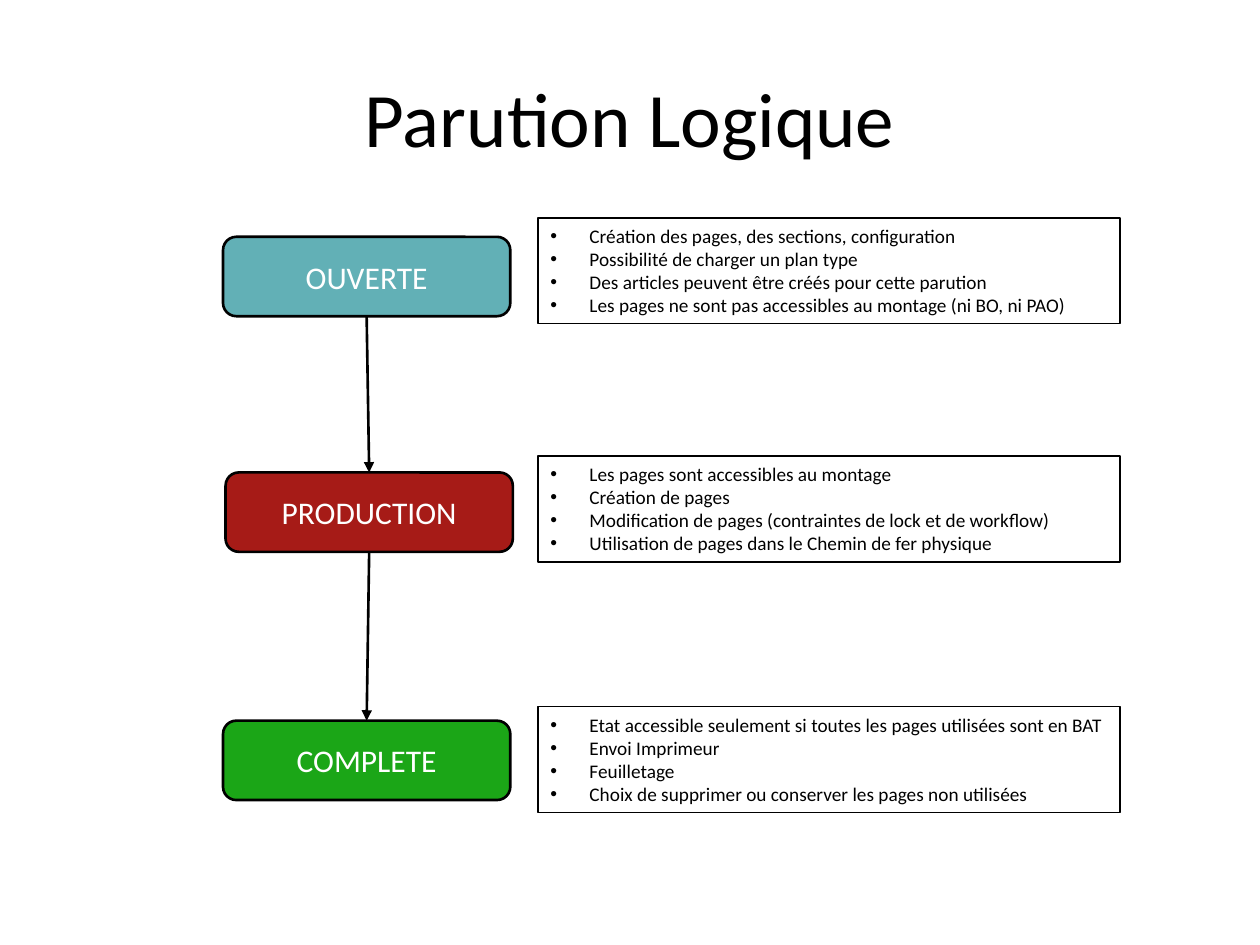
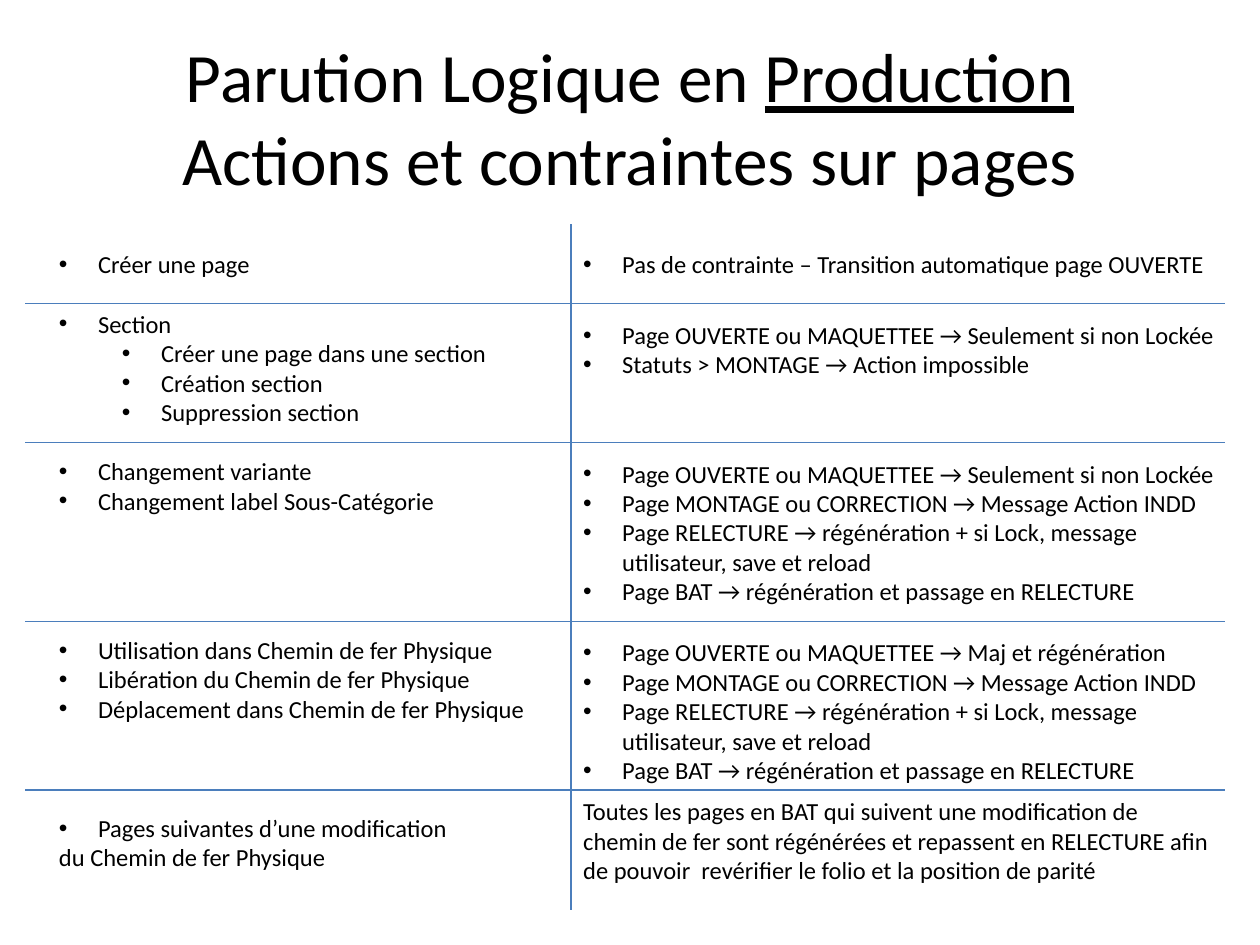
from dataclasses import dataclass

from lxml.etree import SubElement
from pptx import Presentation
from pptx.dml.color import RGBColor
from pptx.enum.shapes import MSO_CONNECTOR as Connector, MSO_SHAPE as Shape
from pptx.enum.text import MSO_ANCHOR as Anchor, MSO_AUTO_SIZE as AutoSize, PP_ALIGN as Align
from pptx.oxml.ns import qn
from pptx.util import Pt

PX = 9144  # EMU in one px, 100 px to the inch
TITLE_ONLY = 5


@dataclass(frozen=True)
class Theme:
    font: str = "Calibri"
    ink: str = "000000"
    paper: str = "FFFFFF"
    rule: str = "4B7EBC"
    open_state: str = "62B0B6"
    production_state: str = "A61B17"
    complete_state: str = "1BA617"
    title: float = 44
    long_title: float = 39.6
    state: float = 18
    body: float = 14
    note: float = 11
    line_pitch: float = 17.1  # height of one body line


THEME = Theme()


@dataclass(frozen=True)
class Item:
    text: str
    level: int = 0
    bullet: bool = True
    lines_before: int = 0


STATES = [
    ("OUVERTE", THEME.open_state, (177, 188), 173, [
        "Création des pages, des sections, configuration",
        "Possibilité de charger un plan type",
        "Des articles peuvent être créés pour cette parution",
        "Les pages ne sont pas accessibles au montage (ni BO, ni PAO)"]),
    ("PRODUCTION", THEME.production_state, (179, 375), 362, [
        "Les pages sont accessibles au montage",
        "Création de pages",
        "Modification de pages (contraintes de lock et de workflow)",
        "Utilisation de pages dans le Chemin de fer physique"]),
    ("COMPLETE", THEME.complete_state, (177, 572), 561, [
        "Etat accessible seulement si toutes les pages utilisées sont en BAT",
        "Envoi Imprimeur",
        "Feuilletage",
        "Choix de supprimer ou conserver les pages non utilisées"]),
]

ACTIONS = [
    Item("Créer une page"),
    Item("Section", lines_before=1),
    Item("Créer une page dans une section", level=1),
    Item("Création section", level=1),
    Item("Suppression section", level=1),
    Item("Changement variante", lines_before=1),
    Item("Changement label Sous-Catégorie"),
    Item("Utilisation dans Chemin de fer Physique", lines_before=4),
    Item("Libération du Chemin de fer Physique"),
    Item("Déplacement dans Chemin de fer Physique"),
    Item("Pages suivantes d’une modification", lines_before=3),
    Item("du Chemin de fer Physique", bullet=False),
]

NOT_LOCKED = "Page OUVERTE ou MAQUETTEE → Seulement si non Lockée"
LATER_STATUSES = [
    "Page MONTAGE ou CORRECTION → Message Action INDD",
    "Page RELECTURE → régénération + si Lock, message utilisateur, save et reload",
    "Page BAT → régénération et passage en RELECTURE",
]

# top, height and items of each row of constraints
CONSTRAINTS = [
    (193, 34, [Item("Pas de contrainte – Transition automatique page OUVERTE")]),
    (249, 57, [Item(NOT_LOCKED), Item("Statuts > MONTAGE → Action impossible")]),
    (359, 128, [Item(text) for text in [NOT_LOCKED, *LATER_STATUSES]]),
    (501, 128, [Item(text) for text in
                ["Page OUVERTE ou MAQUETTEE → Maj et régénération", *LATER_STATUSES]]),
    (627, 81, [
        Item("Toutes les pages en BAT qui suivent une modification de", bullet=False),
        Item("chemin de fer sont régénérées et repassent en RELECTURE afin "
             "de pouvoir  revérifier le folio et la position de parité", bullet=False)]),
]


def emu(*lengths):
    return [length * PX for length in lengths]


def colour(value):
    return RGBColor.from_string(value)


def set_font(para, size, ink=THEME.ink):
    para.font.name = THEME.font
    para.font.size = Pt(size)
    para.font.color.rgb = colour(ink)


def add_bullet(para, level):
    """Hang a round bullet 31 px left of the text."""
    properties = para._p.get_or_add_pPr()
    properties.set("marL", str((31 + 50 * level) * PX))
    properties.set("indent", str(-31 * PX))
    SubElement(properties, qn("a:buFont")).set("typeface", "Arial")
    SubElement(properties, qn("a:buChar")).set("char", "•")


def fill_list(frame, items, size):
    frame.word_wrap = True
    frame.vertical_anchor = Anchor.TOP
    for index, item in enumerate(items):
        para = frame.paragraphs[0] if index == 0 else frame.add_paragraph()
        para.text = item.text
        para.level = item.level
        para.alignment = Align.LEFT
        if item.lines_before:
            para.space_before = Pt(item.lines_before * THEME.line_pitch)
        if item.bullet:
            add_bullet(para, item.level)
        set_font(para, size)


def add_list(page, box, items):
    fill_list(page.shapes.add_textbox(*emu(*box)).text_frame, items, THEME.body)


def add_block(page, kind, box, line_width, fill=None):
    block = page.shapes.add_shape(kind, *emu(*box))
    block.shadow.inherit = False
    if fill:
        block.fill.solid()
        block.fill.fore_color.rgb = colour(fill)
    else:
        block.fill.background()
    block.line.color.rgb = colour(THEME.ink)
    block.line.width = Pt(line_width)
    return block


def add_line(page, start, end, ink, width):
    line = page.shapes.add_connector(Connector.STRAIGHT, *emu(*start, *end))
    line.line.color.rgb = colour(ink)
    line.line.width = Pt(width)
    SubElement(line._element.spPr, qn("a:effectLst"))
    return line


def add_page(deck, size, title_lines):
    """Add a page whose title lines are lists of (text, underlined) spans."""
    page = deck.slides.add_slide(deck.slide_layouts[TITLE_ONLY])
    title = page.shapes.title
    title.left, title.top, title.width, title.height = emu(50, 30, 900, 125)
    frame = title.text_frame
    frame.auto_size = AutoSize.NONE
    frame.vertical_anchor = Anchor.MIDDLE
    para = frame.paragraphs[0]
    para.alignment = Align.CENTER
    set_font(para, size)
    for index, spans in enumerate(title_lines):
        if index:
            para.add_line_break()
        for text, underlined in spans:
            span = para.add_run()
            span.text = text
            span.font.size = Pt(size)
            if underlined:
                span.font.underline = True
    return page


def add_state(page, box, name, fill):
    state = add_block(page, Shape.ROUNDED_RECTANGLE, box, 1.5, fill)
    state.text_frame.vertical_anchor = Anchor.MIDDLE
    para = state.text_frame.paragraphs[0]
    para.text = name
    para.alignment = Align.CENTER
    set_font(para, THEME.state, THEME.paper)
    return state


def add_note(page, box, texts):
    note = add_block(page, Shape.RECTANGLE, box, 0.75)
    fill_list(note.text_frame, [Item(text) for text in texts], THEME.note)


def add_arrow(page, upper, lower):
    """Join the bottom of one state to the top of the next."""
    arrow = add_line(page, (0, 0), (0, 0), THEME.ink, 1.5)
    arrow.begin_connect(upper, 2)
    arrow.end_connect(lower, 0)
    SubElement(arrow.line._get_or_add_ln(), qn("a:tailEnd")).set("type", "triangle")


def build_states_page(deck):
    page = add_page(deck, THEME.title, [[("Parution Logique", False)]])
    states = []
    for name, fill, corner, note_top, texts in STATES:
        states.append(add_state(page, (*corner, 228, 63), name, fill))
        add_note(page, (427, note_top, 462, 84), texts)
    for upper, lower in zip(states, states[1:]):
        add_arrow(page, upper, lower)


def add_grid(page, box, divider, rules):
    """Draw the column divider and the row rules across the box."""
    left, top, width, height = box
    add_line(page, (left + divider, top), (left + divider, top + height), THEME.rule, 1)
    for offset in rules:
        add_line(page, (left, top + offset), (left + width, top + offset), THEME.rule, 0.75)


def build_actions_page(deck):
    page = add_page(deck, THEME.long_title, [
        [("Parution Logique en ", False), ("Production", True)],
        [("Actions et contraintes sur pages", False)]])
    add_grid(page, (20, 178, 952, 544), 433, (63, 173, 315, 449))
    add_list(page, (37, 193, 393, 528), ACTIONS)
    for top, height, items in CONSTRAINTS:
        add_list(page, (453, top, 528, height), items)


def main():
    deck = Presentation()
    deck.slide_width, deck.slide_height = emu(1000, 750)
    build_states_page(deck)
    build_actions_page(deck)
    deck.save("out.pptx")


if __name__ == "__main__":
    main()
